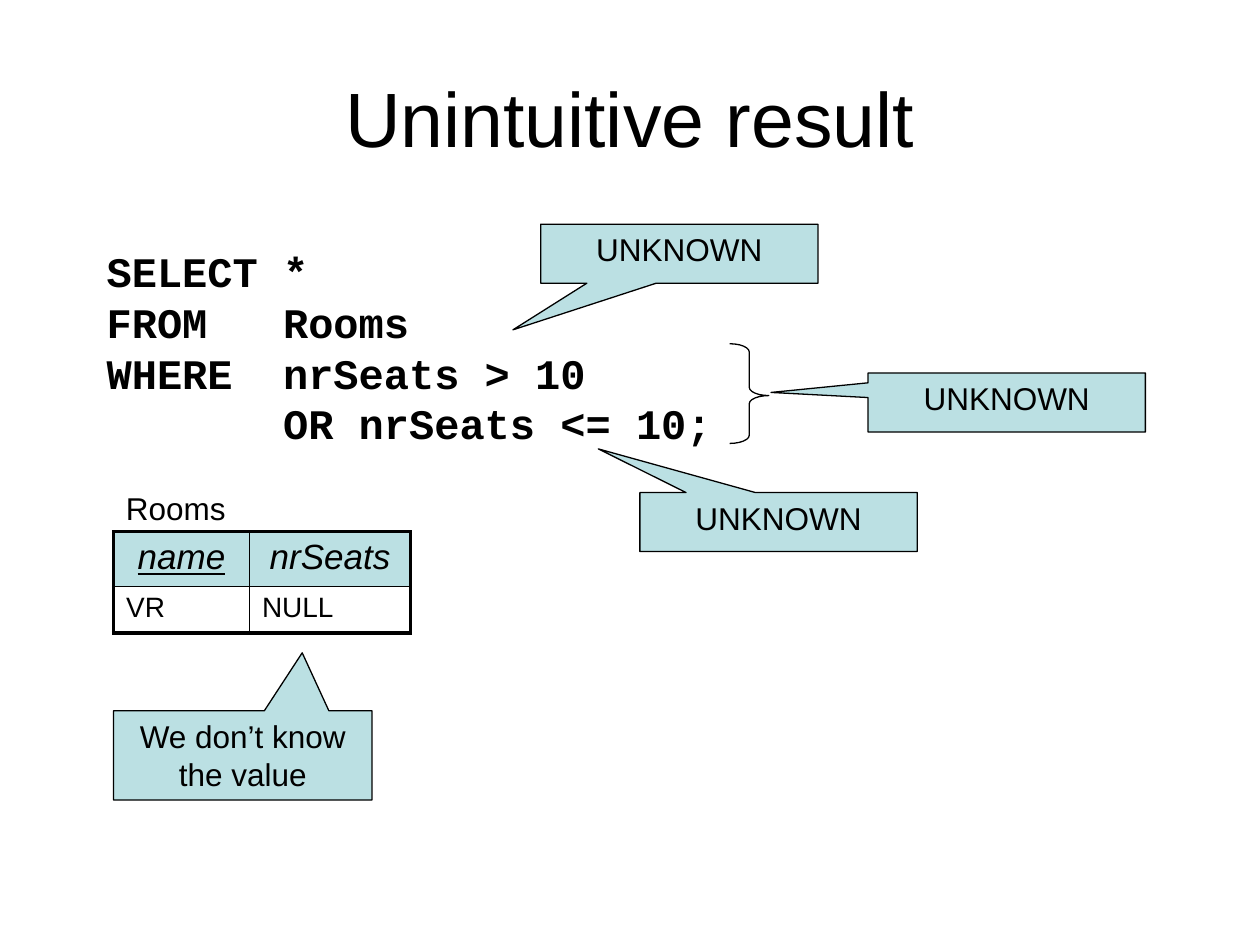
"""Build a slide on how SQL comparisons with NULL evaluate to UNKNOWN."""
from typing import NamedTuple

from lxml import etree
from pptx import Presentation
from pptx import util as u
from pptx.dml import color
from pptx.enum import shapes, text
from pptx.oxml import ns

BLACK, WHITE, TEAL = "000000", "FFFFFF", "BBE0E3"
LEFT = 2.29
THICK, THIN = 2.25, 1


class Box(NamedTuple):
    x: float
    y: float
    w: float
    h: float

    def cm(self) -> list:
        return [u.Cm(v) for v in self]


class Callout(NamedTuple):
    box: Box
    tip: tuple[float, float]
    label: str = "UNKNOWN"


class Cell(NamedTuple):
    label: str
    underline: bool = False


CALLOUTS = [
    Callout(Box(LEFT, 14.33, 5.21, 1.8), (0.23, -1.15), "We don’t know the value"),
    Callout(Box(10.9, 4.52, 5.59, 1.19), (-0.6, 1.29)),
    Callout(Box(12.9, 9.93, 5.59, 1.19), (-0.65, -1.24)),
    Callout(Box(17.5, 7.52, 5.59, 1.19), (-0.85, -0.17)),
]
QUERY = [
    "SELECT * ",
    "FROM   Rooms",
    "WHERE  nrSeats > 10 ",
    "       OR nrSeats <= 10;",
]
ROOMS = [[Cell("name", True), Cell("nrSeats")], [Cell("VR"), Cell("NULL")]]
COLUMNS, ROWS = (2.74, 3.25), (1.09, 0.94)


def rgb(value: str) -> color.RGBColor:
    return color.RGBColor.from_string(value)


def add_run(p, label: str, size: float, font: str = "Arial"):
    r = p.add_run()
    r.text = label
    r.font.size = u.Pt(size)
    r.font.name = font
    r.font.color.rgb = rgb(BLACK)
    return r


def add_text(s, box: Box):
    tf = s.shapes.add_textbox(*box.cm()).text_frame
    tf.word_wrap = True
    return tf


def add_outlined(s, kind, box: Box, adjustments: tuple[float, float]):
    sp = s.shapes.add_shape(kind, *box.cm())
    sp.shadow.inherit = False
    sp.line.color.rgb = rgb(BLACK)
    sp.line.width = u.Pt(0.75)
    for i, value in enumerate(adjustments):
        sp.adjustments[i] = value
    return sp


def add_callout(s, callout: Callout) -> None:
    sp = add_outlined(s, shapes.MSO_SHAPE.RECTANGULAR_CALLOUT, callout.box, callout.tip)
    sp.fill.solid()
    sp.fill.fore_color.rgb = rgb(TEAL)
    tf = sp.text_frame
    tf.word_wrap = True
    tf.vertical_anchor = text.MSO_ANCHOR.TOP
    p = tf.paragraphs[0]
    p.alignment = text.PP_ALIGN.CENTER
    add_run(p, callout.label, 18)


def add_border(cell, side: str, width: float) -> None:
    ln = etree.SubElement(cell._tc.get_or_add_tcPr(), ns.qn(f"a:ln{side}"), w=str(u.Pt(width)))
    fill = etree.SubElement(ln, ns.qn("a:solidFill"))
    etree.SubElement(fill, ns.qn("a:srgbClr"), val=BLACK)


def add_rooms_table(s, x: float, y: float) -> None:
    box = Box(x, y, sum(COLUMNS), sum(ROWS))
    table = s.shapes.add_table(len(ROWS), len(COLUMNS), *box.cm()).table
    for column, width in zip(table.columns, COLUMNS):
        column.width = u.Cm(width)
    for i, (row, height) in enumerate(zip(ROOMS, ROWS)):
        table.rows[i].height = u.Cm(height)
        header = i == 0
        for j, item in enumerate(row):
            cell = table.cell(i, j)
            outer = {"L": j == 0, "R": j == len(COLUMNS) - 1,
                     "T": header, "B": i == len(ROWS) - 1}
            for side, is_outer in outer.items():
                add_border(cell, side, THICK if is_outer else THIN)
            cell.fill.solid()
            cell.fill.fore_color.rgb = rgb(TEAL if header else WHITE)
            p = cell.text_frame.paragraphs[0]
            p.alignment = text.PP_ALIGN.CENTER if header else text.PP_ALIGN.LEFT
            r = add_run(p, item.label, 20 if header else 16)
            r.font.bold = False
            r.font.italic = header
            r.font.underline = item.underline


def add_query(s, box: Box) -> None:
    p = add_text(s, box).paragraphs[0]
    p.line_spacing = u.Pt(29)
    for i, line in enumerate(QUERY):
        if i:
            p.add_line_break()
        add_run(p, line, 24, "Courier New").font.bold = True


def main() -> None:
    prs = Presentation()
    prs.slide_width, prs.slide_height = u.Cm(25.4), u.Cm(19.05)
    s = prs.slides.add_slide(prs.slide_layouts[6])

    tf = add_text(s, Box(1.27, 0.76, 22.86, 3.18))
    tf.vertical_anchor = text.MSO_ANCHOR.MIDDLE
    tf.paragraphs[0].alignment = text.PP_ALIGN.CENTER
    add_run(tf.paragraphs[0], "Unintuitive result", 44)

    add_query(s, Box(1.9, 4.82, 19.81, 4.32))
    add_rooms_table(s, LEFT, 10.72)
    tf = add_text(s, Box(LEFT, 9.73, sum(COLUMNS), 1.02))
    add_run(tf.paragraphs[0], "Rooms", 18)
    for callout in CALLOUTS:
        add_callout(s, callout)
    brace = add_outlined(s, shapes.MSO_SHAPE.RIGHT_BRACE,
                         Box(14.71, 6.93, 0.79, 2.01), (0.21, 0.52))
    brace.fill.background()
    prs.save("out.pptx")


if __name__ == "__main__":
    main()
